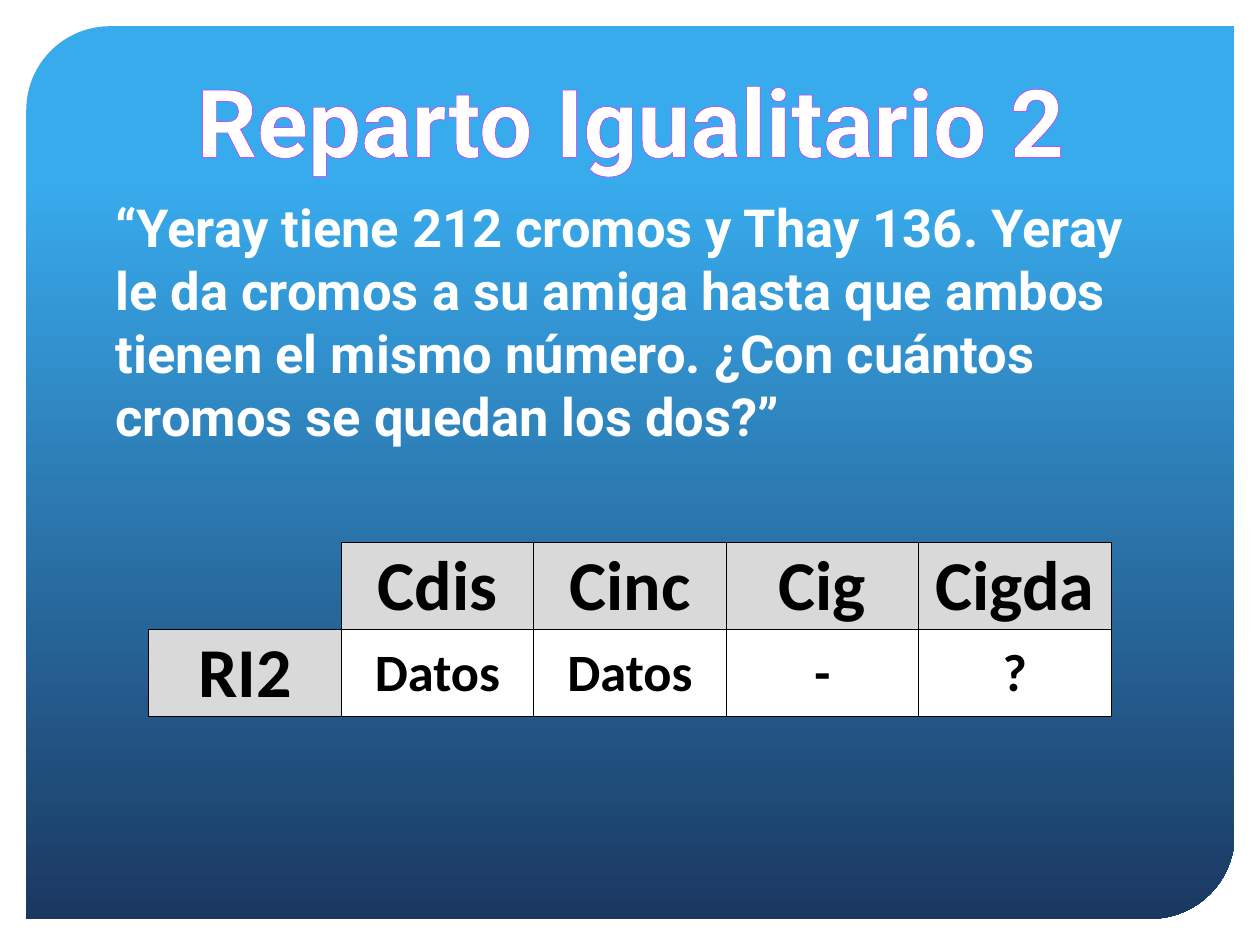
from lxml import etree
from pptx import Presentation
from pptx.dml.color import RGBColor
from pptx.enum.shapes import MSO_SHAPE
from pptx.enum.text import MSO_ANCHOR, MSO_AUTO_SIZE, PP_ALIGN
from pptx.oxml.ns import qn
from pptx.util import Pt

PANEL = MSO_SHAPE.ROUND_2_DIAG_RECTANGLE
CENTER, LEFT = PP_ALIGN.CENTER, PP_ALIGN.LEFT
MIDDLE = MSO_ANCHOR.MIDDLE
GROW = MSO_AUTO_SIZE.SHAPE_TO_FIT_TEXT
WHITE = RGBColor(0xFF, 0xFF, 0xFF)
BLACK = RGBColor(0, 0, 0)
GRAY = RGBColor(0xD9, 0xD9, 0xD9)
SKY = RGBColor(0x38, 0xAB, 0xED)
NAVY = RGBColor(0x1B, 0x38, 0x61)
PINK = RGBColor(0xE1, 0x13, 0xFF)

TITLE = "Reparto Igualitario 2"
STORY = (
    "“Yeray tiene 212 cromos y Thay 136. Yeray le da cromos a su amiga "
    "hasta que ambos tienen el mismo número. ¿Con cuántos cromos se "
    "quedan los dos?”"
)
ROWS = [
    ["", "Cdis", "Cinc", "Cig", "Cigda"],
    ["RI2", "Datos", "Datos", "-", "?"],
]


def style(para, name, size, color, align):
    para.alignment = align
    font = para.font
    font.name, font.size, font.bold = name, Pt(size), True
    font.color.rgb = color


def add_line(props, tag, width, color):
    line = etree.Element(qn(tag), w=str(Pt(width)))
    if color is None:
        etree.SubElement(line, qn("a:noFill"))
    else:
        fill = etree.SubElement(line, qn("a:solidFill"))
        etree.SubElement(fill, qn("a:srgbClr"), val=str(color))
    props.append(line)
    return line


def add_panel(slide):
    panel = slide.shapes.add_shape(PANEL, Pt(15), Pt(15), Pt(690.5), Pt(510))
    panel.shadow.inherit = False
    panel.adjustments[0] = 0.094
    panel.adjustments[1] = 0
    panel.line.fill.background()
    panel.fill.gradient()
    panel.fill.gradient_angle = 270
    stops = panel.fill.gradient_stops
    for stop, spot, color in zip(stops, (0.17, 1), (SKY, NAVY)):
        stop.position = spot
        stop.color.rgb = color


def add_text(slide, text, box, size, align, wrap):
    frame = slide.shapes.add_textbox(*map(Pt, box)).text_frame
    frame.word_wrap = wrap
    frame.auto_size = GROW
    para = frame.paragraphs[0]
    run = para.add_run()
    run.text = text
    style(para, "Roboto", size, WHITE, align)
    return run


def outline(run, color):
    props = run.font._element
    props.insert(0, add_line(props, "a:ln", 1, color))


def fill_cell(cell, text, head):
    props = cell._tc.get_or_add_tcPr()
    for side in "LRTB":
        shown = text or side in "RB"
        add_line(props, "a:ln" + side, 0.5, BLACK if shown else None)
    if not text:
        cell.fill.background()
        return
    cell.fill.solid()
    cell.fill.fore_color.rgb = GRAY if head else WHITE
    cell.vertical_anchor = MIDDLE
    cell.margin_left = cell.margin_right = cell.margin_top = Pt(0.75)
    cell.margin_bottom = Pt(0)
    cell.text = text
    size = 40 if head else 30
    style(cell.text_frame.paragraphs[0], "Calibri", size, BLACK, CENTER)


def add_grid(slide):
    shape = slide.shapes.add_table(
        len(ROWS), len(ROWS[0]), Pt(85), Pt(309.75), Pt(550), Pt(99.5)
    )
    grid = shape.table
    for r, row in enumerate(ROWS):
        for c, text in enumerate(row):
            fill_cell(grid.cell(r, c), text, r == 0 or c == 0)


def main():
    deck = Presentation()
    deck.slide_width, deck.slide_height = Pt(720), Pt(540)
    slide = deck.slides.add_slide(deck.slide_layouts[6])
    add_panel(slide)
    title = add_text(slide, TITLE, (91.4, 32.4, 538, 72.7), 54, CENTER, False)
    outline(title, PINK)
    add_grid(slide)
    add_text(slide, STORY, (59, 108, 607, 152.6), 30, LEFT, True)
    deck.save("out.pptx")


if __name__ == "__main__":
    main()
